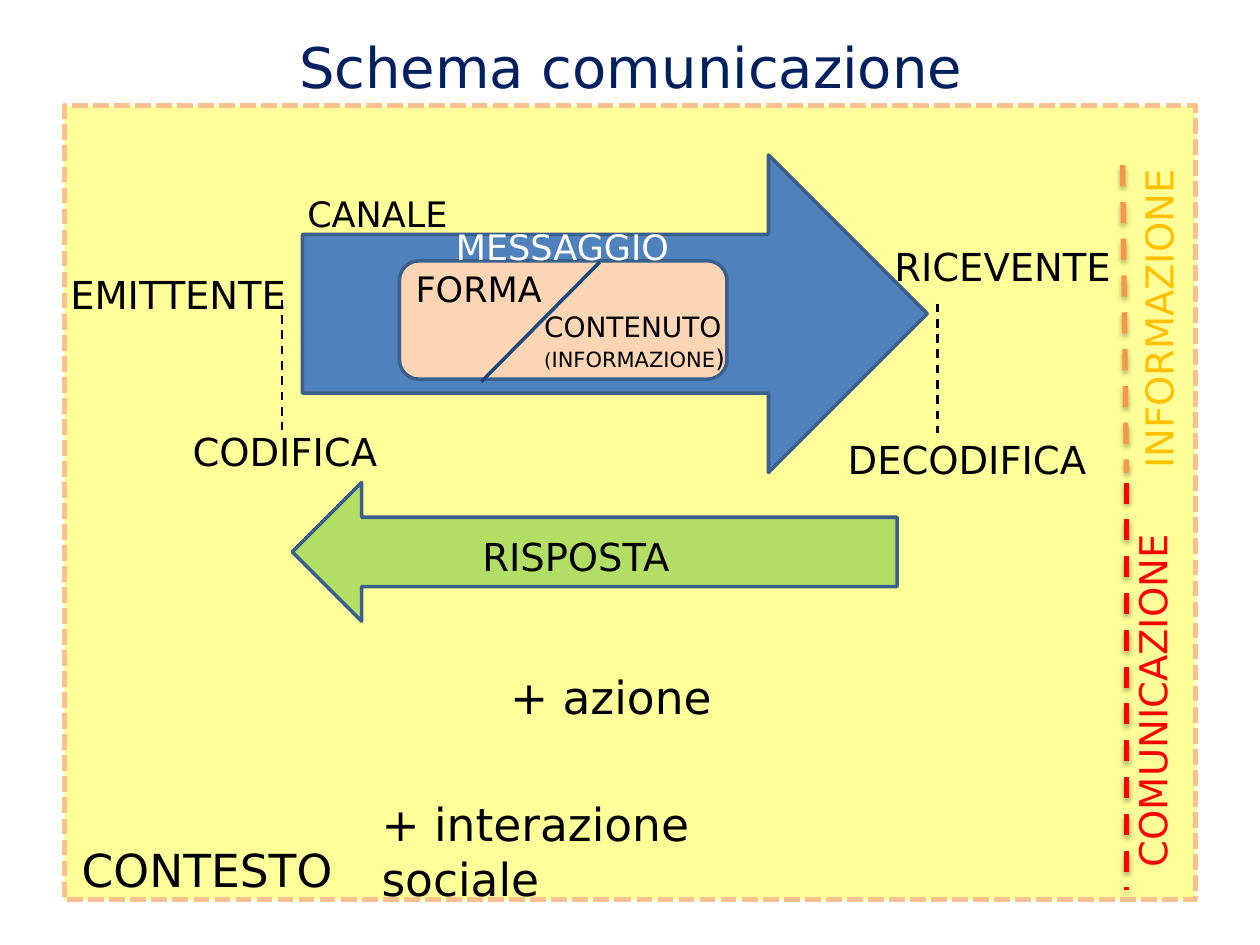
import pptx
import pptx.util
import pptx.dml.color
import pptx.enum.dml
import pptx.enum.shapes
import pptx.enum.text
import pptx.oxml
import pptx.oxml.ns

RGB = pptx.dml.color.RGBColor
SHAPE = pptx.enum.shapes.MSO_SHAPE
DASH = pptx.enum.dml.MSO_LINE
ALIGN = pptx.enum.text.PP_ALIGN
FIT = pptx.enum.text.MSO_AUTO_SIZE
ANCHOR = pptx.enum.text.MSO_ANCHOR

BLACK = RGB(0, 0, 0)
WHITE = RGB(255, 255, 255)
NAVY = RGB(0x00, 0x20, 0x60)
YELLOW = RGB(0xFF, 0xFF, 0x99)
PEACH = RGB(0xFA, 0xC0, 0x90)
SKIN = RGB(0xFC, 0xD5, 0xB5)
BLUE = RGB(0x4F, 0x81, 0xBD)
OUTLINE = RGB(0x3A, 0x5F, 0x8C)
DARK_BLUE = RGB(0x1F, 0x49, 0x7D)
GREEN = RGB(0x92, 0xD0, 0x50)
ORANGE = RGB(0xF7, 0x96, 0x46)
GOLD = RGB(0xFF, 0xC0, 0x00)
RED = RGB(0xFF, 0, 0)

FONT = "DejaVu Sans"
COLUMNS, ROWS = 100, 75
WIDTH, HEIGHT = pptx.util.Inches(10), pptx.util.Inches(7.5)

SHAPES = [
    (SHAPE.RECTANGLE, (5.1, 8.4, 89.8, 63), YELLOW, PEACH, 3, {}),
    (SHAPE.RIGHT_ARROW, (24, 12.3, 49.6, 25.2), BLUE, OUTLINE, 2, {}),
    (SHAPE.ROUNDED_RECTANGLE, (31.7, 20.7, 26, 9.4), SKIN, OUTLINE, 2, {}),
    (SHAPE.RIGHT_ARROW, (23.2, 38.3, 48, 11), GREEN, OUTLINE, 2,
     {"rotation": 180, "alpha": 69}),
]

LINES = [
    ((89.1, 13.1), (89.4, 37.5), ORANGE, 3, DASH.DASH, True),
    ((89.4, 38.3), (89.4, 70.6), RED, 3, DASH.DASH, True),
    ((22.4, 23.8), (22.4, 34.1), BLACK, 1.25, DASH.DASH, False),
    ((74.4, 24.1), (74.4, 34.4), BLACK, 1.25, DASH.DASH, False),
    ((38.2, 30.3), (47.6, 20.8), DARK_BLUE, 2, None, False),
]

LABELS = [
    ("EMITTENTE", (4.6, 21, 19.6, 4.7), 22, BLACK),
    ("RICEVENTE", (70, 18.8, 19.8, 4.7), 22, BLACK),
    ("CANALE", (23.4, 14.8, 13.2, 4.4), 20, BLACK),
    ("CODIFICA", (14.3, 33.5, 17.6, 4.7), 22, BLACK),
    ("DECODIFICA", (66.3, 34.1, 22, 4.7), 22, BLACK),
    ("FORMA", (32, 20.7, 12.1, 4.4), 20, BLACK),
    ("+ azione", (39.5, 52.6, 18.1, 5.4), 26, BLACK),
    ("+ interazione sociale", (29.3, 62.7, 40.1, 5.4), 26, BLACK),
    ("CONTESTO", (5.5, 66.3, 22.2, 5.4), 26, BLACK),
]
WRAPPED = [
    ("MESSAGGIO", (35.2, 17.4, 24, 4.4), 20, WHITE),
    ("RISPOSTA", (37.3, 41.8, 19.8, 4.7), 22, BLACK),
]
VERTICAL = [
    ("INFORMAZIONE", (89.6, 10.2, 5.7, 28), 22, GOLD),
    ("COMUNICAZIONE", (89.1, 40, 5.7, 29.8), 22, RED),
]
TITLE = ("Schema comunicazione", (5.1, 2.1, 90, 12.5), 32, NAVY)
CONTENT = [
    [("CONTENUTO", 16)],
    [("(", 11), ("INFORMAZIONE", 12), (")", 14)],
]
CONTENT_AREA = (42.2, 24.1, 26, 6.1)

SHADOW = (
    '<a:effectLst %s><a:outerShdw blurRad="39370" dist="22860" dir="5400000" '
    'rotWithShape="0"><a:srgbClr val="000000"><a:alpha val="35000"/>'
    '</a:srgbClr></a:outerShdw></a:effectLst>'
) % pptx.oxml.ns.nsdecls("a")
NO_SHADOW = "<a:effectLst %s/>" % pptx.oxml.ns.nsdecls("a")


def place(*cells):
    units = (WIDTH / COLUMNS, HEIGHT / ROWS) * 2
    return [round(n * unit) for n, unit in zip(cells, units)]


def set_line(line, color, width, dash):
    line.color.rgb = color
    line.width = pptx.util.Pt(width)
    if dash is not None:
        line.dash_style = dash


def add_shape(s, kind, area, fill, color, width, options):
    sp = s.shapes.add_shape(kind, *place(*area))
    sp.shadow.inherit = False
    sp.fill.solid()
    sp.fill.fore_color.rgb = fill
    dash = DASH.SQUARE_DOT if kind == SHAPE.RECTANGLE else None
    set_line(sp.line, color, width, dash)
    sp.rotation = options.get("rotation", 0)
    if "alpha" in options:
        clr = sp.fill._xPr.find(".//" + pptx.oxml.ns.qn("a:srgbClr"))
        alpha = clr.makeelement(pptx.oxml.ns.qn("a:alpha"),
                                {"val": str(options["alpha"] * 1000)})
        clr.append(alpha)


def add_line(s, start, end, color, width, dash, shadow):
    straight = pptx.enum.shapes.MSO_CONNECTOR.STRAIGHT
    cx = s.shapes.add_connector(straight, *place(*start, *end))
    set_line(cx.line, color, width, dash)
    effect = SHADOW if shadow else NO_SHADOW
    cx._element.spPr.append(pptx.oxml.parse_xml(effect))


def add_text(s, paragraphs, area, color, wrap=True, fit=FIT.SHAPE_TO_FIT_TEXT,
             align=ALIGN.LEFT, vert=None):
    tf = s.shapes.add_textbox(*place(*area)).text_frame
    frame = {"word_wrap": wrap, "auto_size": fit, "vertical_anchor": ANCHOR.TOP}
    for name, value in frame.items():
        setattr(tf, name, value)
    if vert:
        tf._txBody.bodyPr.set("vert", vert)
    for i, runs in enumerate(paragraphs):
        p = tf.add_paragraph() if i else tf.paragraphs[0]
        p.alignment = align
        for text, size in runs:
            r = p.add_run()
            r.text = text
            for name, value in {"name": FONT, "size": pptx.util.Pt(size)}.items():
                setattr(r.font, name, value)
            r.font.color.rgb = color


def add_label(s, label, **options):
    text, area, size, color = label
    add_text(s, [[(text, size)]], area, color, **options)


def main():
    prs = pptx.Presentation()
    prs.slide_width, prs.slide_height = WIDTH, HEIGHT
    s = prs.slides.add_slide(prs.slide_layouts[6])
    for shape in SHAPES:
        add_shape(s, *shape)
    for line in LINES:
        add_line(s, *line)
    add_label(s, TITLE, fit=FIT.NONE, align=ALIGN.CENTER)
    for label in LABELS:
        add_label(s, label, wrap=False)
    for label in WRAPPED:
        add_label(s, label)
    for label in VERTICAL:
        add_label(s, label, vert="vert270")
    add_text(s, CONTENT, CONTENT_AREA, BLACK)
    prs.save("out.pptx")


if __name__ == "__main__":
    main()
